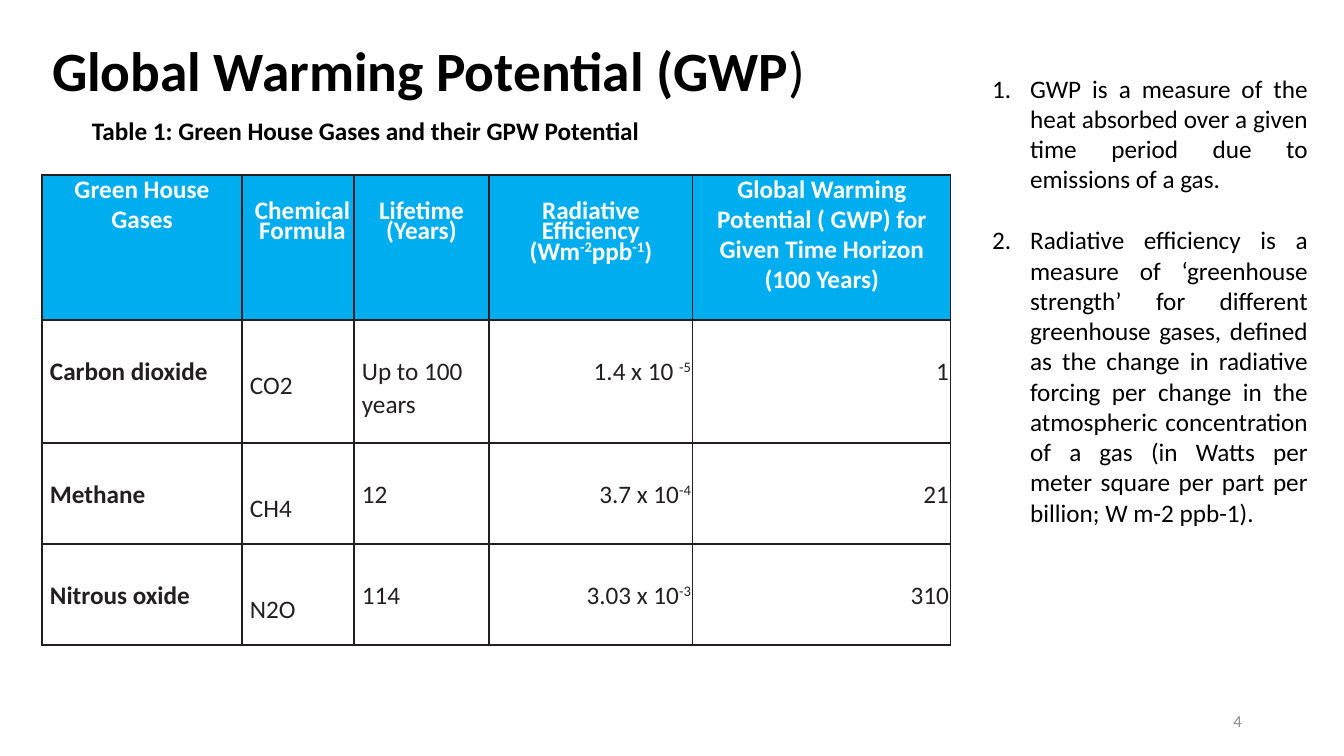
"""Build a slide with a table of greenhouse gases and their global warming potential."""
from pptx import Presentation
from pptx import util as u
from pptx.dml.color import RGBColor
from pptx.enum import text as t
from pptx.oxml import parse_xml
from pptx.oxml.ns import nsdecls

SCALE = 914400 / 100.8
COLORS = {"black": "000000", "white": "FFFFFF", "ink": "231F20", "header": "00AEEF", "number": "8C8C8C"}
LEFT, CENTER, RIGHT, JUSTIFY = (
    t.PP_ALIGN.LEFT, t.PP_ALIGN.CENTER, t.PP_ALIGN.RIGHT, t.PP_ALIGN.JUSTIFY)


def px(*lengths):
    return [u.Emu(round(length * SCALE)) for length in lengths]


def write(frame, content, size=18, color="black", bold=False, align=LEFT,
          spacing=1.0, gap=0, plain_tail="", anchor=t.MSO_ANCHOR.TOP):
    """Write one paragraph per line, with superscripts between ^ marks."""
    frame.word_wrap = True
    frame.auto_size = t.MSO_AUTO_SIZE.NONE
    frame.vertical_anchor = anchor
    frame.text = content
    for index, paragraph in enumerate(frame.paragraphs):
        pieces = paragraph.text.split("^")
        paragraph.clear()
        paragraph.alignment = align
        paragraph.line_spacing = spacing
        paragraph.space_before = u.Pt(gap if index else 0)
        for position, piece in enumerate(pieces + [plain_tail]):
            if not piece:
                continue
            run = paragraph.add_run()
            run.text = piece
            run.font.name = "Calibri"
            run.font.size = u.Pt(size)
            run.font.bold = bold and position < len(pieces)
            run.font.color.rgb = RGBColor.from_string(COLORS[color])
            if position % 2 and position < len(pieces):
                run._r.get_or_add_rPr().set("baseline", "30000")


presentation = Presentation()
presentation.slide_width, presentation.slide_height = px(1344, 756)
slide = presentation.slides.add_slide(presentation.slide_layouts[1])

title = slide.shapes.title
title.left, title.top, title.width, title.height = px(42, 37, 884, 73)
write(title.text_frame, "Global Warming Potential (GWP", size=39.6, bold=True,
      spacing=0.9, plain_tail=")", anchor=t.MSO_ANCHOR.MIDDLE)

notes = slide.placeholders[1]
notes.left, notes.top, notes.width, notes.height = px(982, 68, 336, 499)
write(notes.text_frame,
      "GWP is a measure of the heat absorbed over a given time period due to emissions of a gas.\n"
      "Radiative efficiency is a measure of ‘greenhouse strength’ for different greenhouse gases, "
      "defined as the change in radiative forcing per change in the atmospheric concentration of "
      "a gas (in Watts per meter square per part per billion; W m-2 ppb-1).",
      align=JUSTIFY, gap=22)
indent = px(38)[0]
for paragraph in notes.text_frame.paragraphs:
    properties = paragraph._p.get_or_add_pPr()
    properties.set("marL", str(indent))
    properties.set("indent", str(-indent))
    properties.append(parse_xml(f'<a:buAutoNum {nsdecls("a")} type="arabicPeriod"/>'))

caption = slide.shapes.add_textbox(*px(82, 110, 650, 40))
write(caption.text_frame, "Table 1: Green House Gases and their GPW Potential", bold=True)

column_widths = px(200, 112, 135, 204, 258)
row_heights = px(145, 123, 101, 101)
rows = [
    ["Green House Gases", "Chemical\nFormula", "Lifetime\n(Years)",
     "Radiative\nEfficiency\n(Wm^-2^ppb^-1^)",
     "Global Warming Potential ( GWP) for Given Time Horizon (100 Years)"],
    ["Carbon dioxide", "CO2", "Up to 100 years", "1.4 x 10 ^-5", "1"],
    ["Methane", "CH4", "12", "3.7 x 10^-4", "21"],
    ["Nitrous oxide", "N2O", "114", "3.03 x 10^-3", "310"],
]
header_margins = [(24, 0, 24), (9, 34, 0), (0, 34, 0), (0, 34, 0), (15, 0, 15)]
body_margins = [(8, 34, 0), (8, 48, 0), (8, 34, 0), (7, 34, 2), (7, 34, 2)]

table = slide.shapes.add_table(len(rows), len(column_widths), *px(42, 175, 909, 470)).table
table.horz_banding = False
for column, width in zip(table.columns, column_widths):
    column.width = width
for row, height in zip(table.rows, row_heights):
    row.height = height

for row_index, values in enumerate(rows):
    is_header = row_index == 0
    for column_index, value in enumerate(values):
        cell = table.cell(row_index, column_index)
        margins = (header_margins if is_header else body_margins)[column_index]
        cell.margin_left, cell.margin_top, cell.margin_right, cell.margin_bottom = px(*margins, 0)
        if is_header:
            cell.fill.solid()
            cell.fill.fore_color.rgb = RGBColor.from_string(COLORS["header"])
            tight = "\n" in value
            write(cell.text_frame, value, color="white", bold=True, align=CENTER,
                  spacing=u.Pt(12.1) if tight else 0.97, gap=2.5)
        else:
            cell.fill.background()
            write(cell.text_frame, value, color="ink", bold=column_index == 0,
                  align=RIGHT if column_index > 2 else LEFT, spacing=1.07)
        cell_properties = cell._tc.get_or_add_tcPr()
        for position, side in enumerate("LRTB"):
            cell_properties.insert(position, parse_xml(
                f'<a:ln{side} {nsdecls("a")} w="12700"><a:solidFill>'
                f'<a:srgbClr val="{COLORS["ink"]}"/></a:solidFill></a:ln{side}>'))

page_number = slide.shapes.add_textbox(*px(950, 701, 302, 40))
write(page_number.text_frame, "4", size=12, color="number", align=RIGHT,
      anchor=t.MSO_ANCHOR.MIDDLE)

presentation.save("out.pptx")
